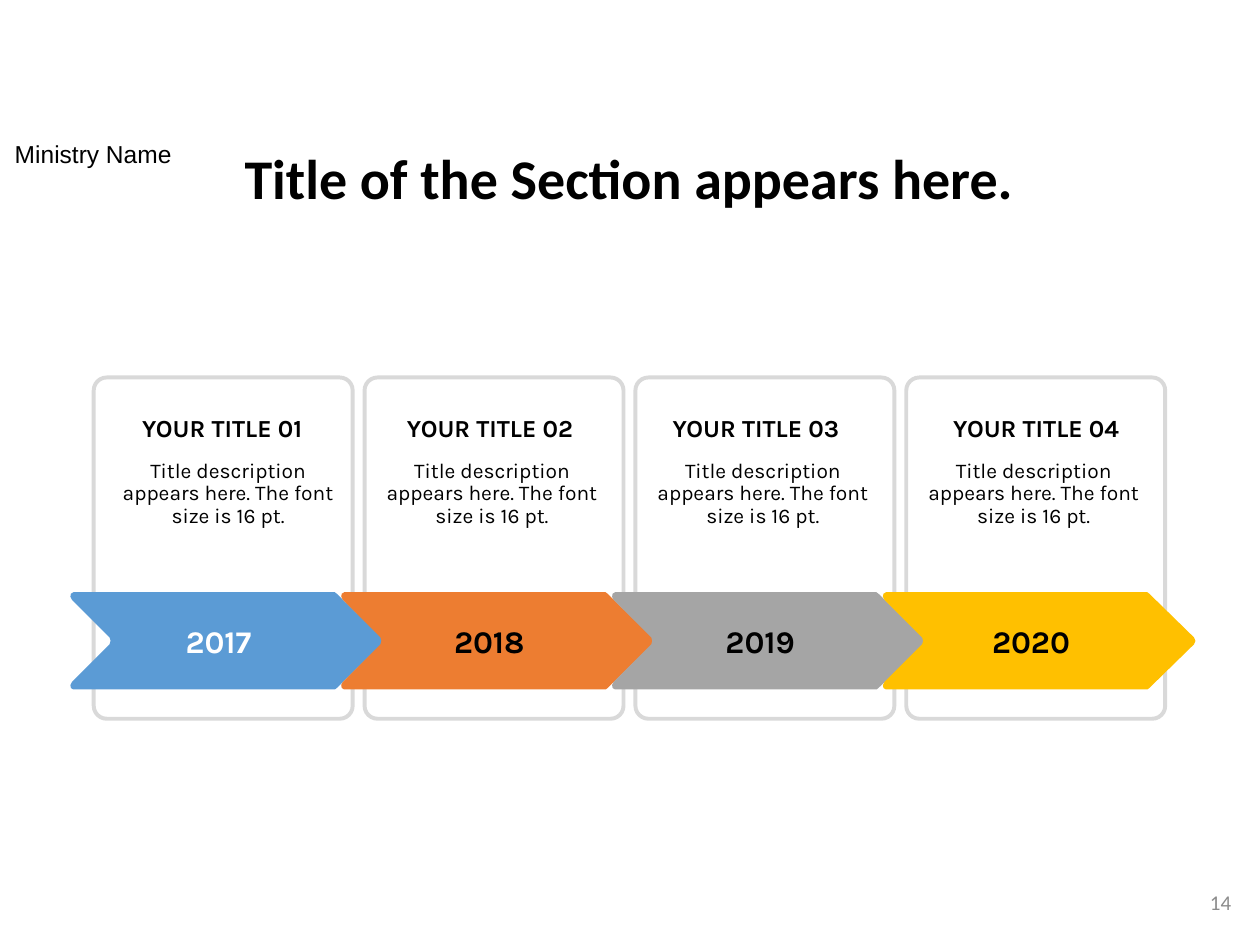
from dataclasses import dataclass

from pptx import Presentation
from pptx import util as u
from pptx.dml.color import RGBColor
from pptx.enum import shapes, text

Cm, Pt = u.Cm, u.Pt
BLACK = "000000"
PITCH = 5.46  # distance between neighbouring stages, in cm
NOTE = "Title description appears here. The font size is 16 pt."


@dataclass
class Stage:
    year: str
    title: str
    fill: str
    year_color: str
    title_left: float
    title_width: float
    note_left: float
    note_width: float


@dataclass
class Style:
    size: float
    font: str = "Karla"
    color: str = BLACK
    bold: bool = False
    align: text.PP_ALIGN = text.PP_ALIGN.CENTER
    anchor: text.MSO_ANCHOR = text.MSO_ANCHOR.TOP
    spacing: float = 1.0
    inset: tuple = (0.25, 0.13)
    grow: bool = False


STAGES = [
    Stage("2017", "YOUR TITLE 01", "5B9BD5", "FFFFFF", 2.08, 4.8, 2.24, 4.72),
    Stage("2018", "YOUR TITLE 02", "ED7D31", BLACK, 7.57, 4.62, 7.67, 4.5),
    Stage("2019", "YOUR TITLE 03", "A5A5A5", BLACK, 12.88, 4.72, 13.13, 4.5),
    Stage("2020", "YOUR TITLE 04", "FFC000", BLACK, 18.49, 4.8, 18.59, 4.5),
]

# Upper half of an arrow from notch to tip; the lower half mirrors it
ARROW_HEIGHT = 1.96
ARROW_TOP_EDGE = [
    (0.83, 0.98), (0.81, 0.91), (0.05, 0.15), (0.02, 0.09), (0.03, 0.03),
    (0.08, 0), (5.35, 0), (5.39, 0.03), (6.29, 0.91), (6.32, 0.98),
]


def rgb(value: str) -> RGBColor:
    return RGBColor.from_string(value)


def add_frame(page, left: float) -> None:
    frame = page.shapes.add_shape(
        shapes.MSO_SHAPE.ROUNDED_RECTANGLE, Cm(left), Cm(7.61), Cm(5.22), Cm(6.88))
    frame.adjustments[0] = 0.05
    frame.shadow.inherit = False
    frame.fill.background()
    frame.line.color.rgb = rgb("D9D9D9")
    frame.line.width = Pt(2.25)


def add_arrow(page, left: float, top: float, fill: str) -> None:
    lower = [(x, ARROW_HEIGHT - y) for x, y in ARROW_TOP_EDGE[-2:0:-1]]
    points = [(x * 100, y * 100) for x, y in ARROW_TOP_EDGE + lower]
    builder = page.shapes.build_freeform(*points[0], scale=Cm(0.01))
    builder.add_line_segments(points[1:], close=True)
    arrow = builder.convert_to_shape(Cm(left), Cm(top))
    arrow.shadow.inherit = False
    arrow.fill.solid()
    arrow.fill.fore_color.rgb = rgb(fill)
    arrow.line.fill.background()


def add_text(page, words: str, left: float, top: float, width: float,
             height: float, style: Style) -> None:
    box = page.shapes.add_textbox(Cm(left), Cm(top), Cm(width), Cm(height))
    frame = box.text_frame
    frame.word_wrap = True
    frame.auto_size = (text.MSO_AUTO_SIZE.SHAPE_TO_FIT_TEXT if style.grow
                       else text.MSO_AUTO_SIZE.NONE)
    frame.vertical_anchor = style.anchor
    frame.margin_left = frame.margin_right = Cm(style.inset[0])
    frame.margin_top = frame.margin_bottom = Cm(style.inset[1])
    para = frame.paragraphs[0]
    para.alignment = style.align
    para.line_spacing = style.spacing
    span = para.add_run()
    span.text = words
    span.font.name = style.font
    span.font.size = Pt(style.size)
    span.font.bold = style.bold
    span.font.color.rgb = rgb(style.color)


def main() -> None:
    deck = Presentation()
    deck.slide_width, deck.slide_height = Cm(25.4), Cm(19.05)
    page = deck.slides.add_slide(deck.slide_layouts[6])

    # Card frames, with the arrows over them
    for index in range(len(STAGES)):
        add_frame(page, 1.89 + index * PITCH)
    for index, stage in enumerate(STAGES):
        add_arrow(page, 1.4 + index * PITCH, 11.94, stage.fill)

    # Year, description and title of each stage
    note_style = Style(12, spacing=0.9, inset=(0.1, 0.05), grow=True)
    title_style = Style(14, bold=True, anchor=text.MSO_ANCHOR.BOTTOM, grow=True)
    for index, stage in enumerate(STAGES):
        year_style = Style(18, color=stage.year_color, bold=True,
                           anchor=text.MSO_ANCHOR.MIDDLE, grow=True)
        add_text(page, stage.year, 3.35 + index * PITCH, 12.4, 2.11, 1.02, year_style)
        add_text(page, NOTE, stage.note_left, 9.22, stage.note_width, 1.47, note_style)
        add_text(page, stage.title, stage.title_left, 8.18, stage.title_width, 0.86,
                 title_style)

    # Page number, heading and ministry
    add_text(page, "14", 19.35, 17.68, 5.72, 1.02,
             Style(12, "Calibri", "8C8C8C", align=text.PP_ALIGN.RIGHT,
                   anchor=text.MSO_ANCHOR.MIDDLE))
    add_text(page, "Title of the Section appears here.", 4.19, 2.92, 16.99, 2.01,
             Style(32, "Calibri", bold=True, spacing=0.9))
    add_text(page, "Ministry Name", 0, 2.74, 3.76, 1.65,
             Style(14, "Arial", spacing=0.9))

    deck.save("out.pptx")


if __name__ == "__main__":
    main()
